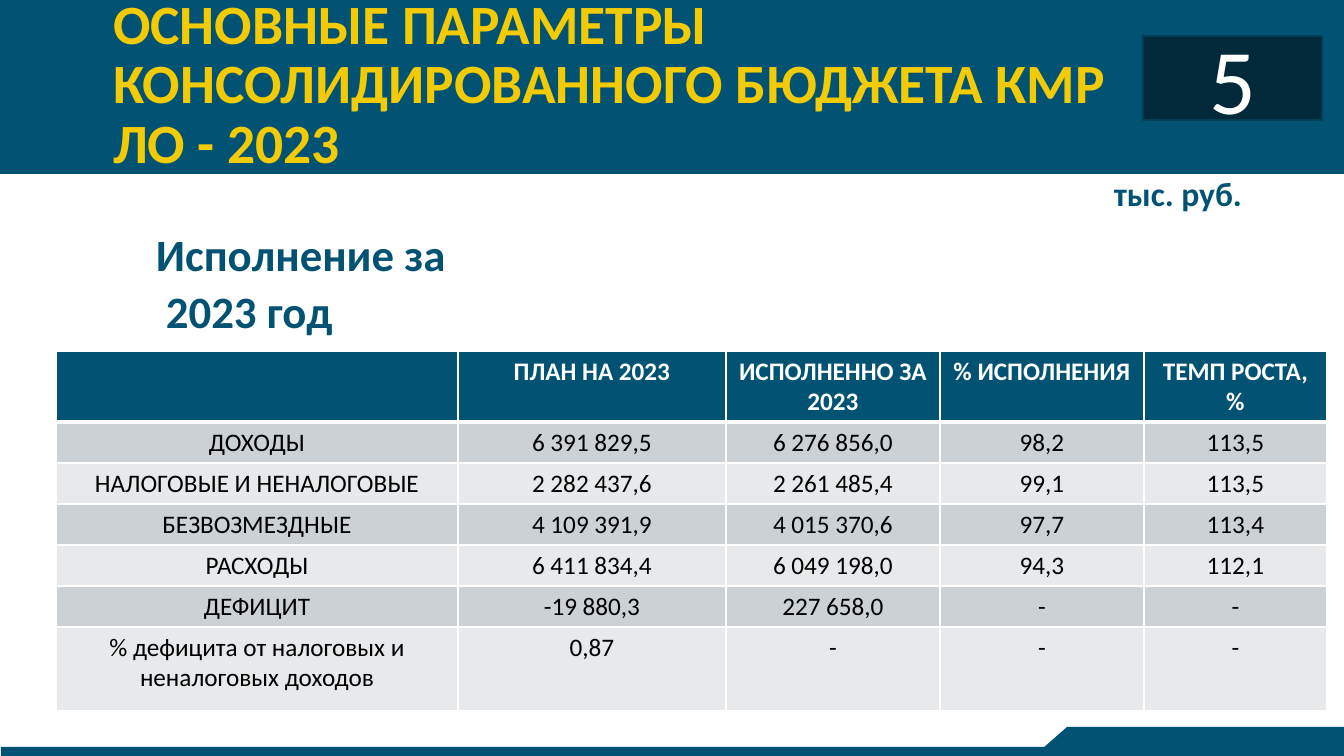
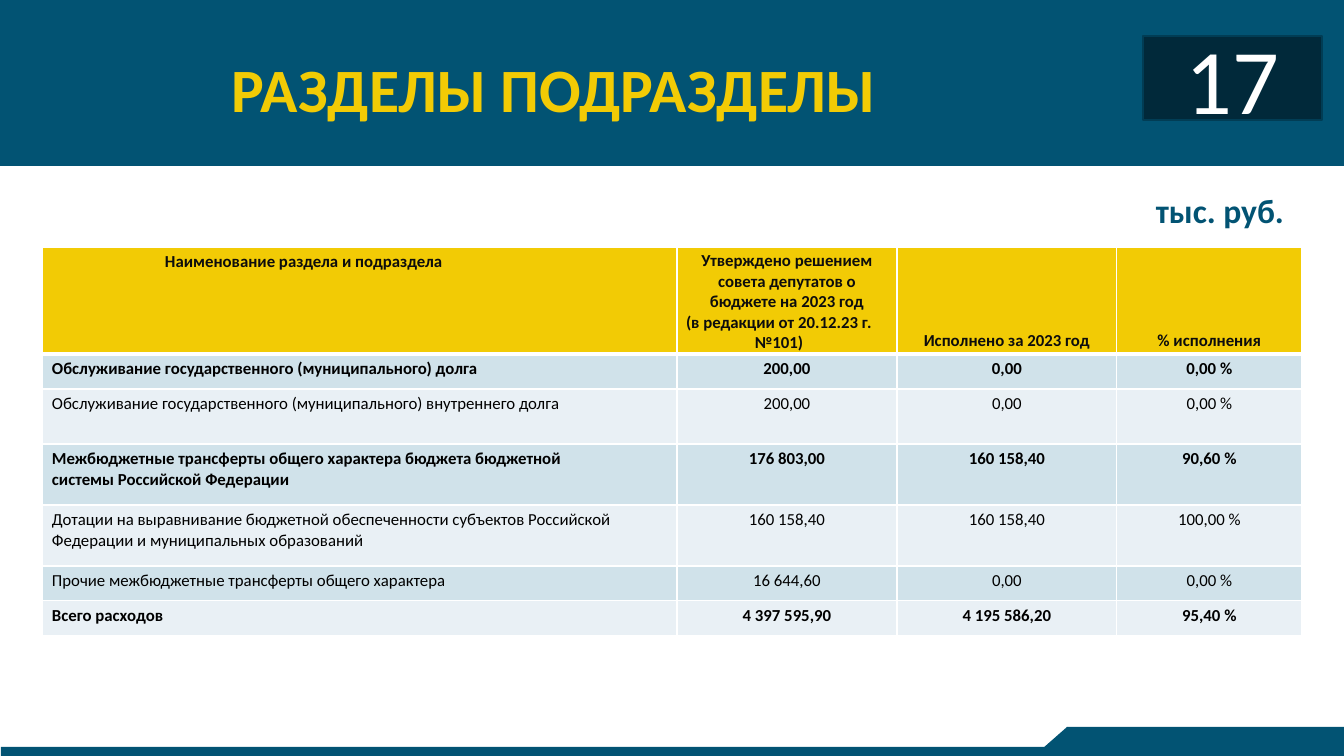
from dataclasses import dataclass

from lxml import etree
from pptx import Presentation
from pptx import util as u
from pptx.dml import color
from pptx.enum import shapes, text
from pptx.oxml import ns


@dataclass(frozen=True)
class Theme:
    """Colours, font and type sizes shared by the slides."""
    font: str = "Calibri"
    teal: str = "025373"
    yellow: str = "F2CB05"
    navy: str = "01293A"
    navy_line: str = "013D55"
    white: str = "FFFFFF"
    black: str = "000000"
    ink: str = "0D0D0D"
    grey_bands: tuple = ("CCD1D5", "E7E9EB")
    blue_bands: tuple = ("D0E2EA", "E9F0F5")
    badge: int = 66
    heading: int = 32
    unit: int = 24
    table: int = 18
    small: int = 12


T = Theme()
W, H = 1344, 756
CENTER, LEFT = text.PP_ALIGN.CENTER, text.PP_ALIGN.LEFT
TOP, MIDDLE, BOTTOM = (text.MSO_ANCHOR.TOP, text.MSO_ANCHOR.MIDDLE,
                       text.MSO_ANCHOR.BOTTOM)

BUDGET_ROWS = [
    ["", "ПЛАН НА 2023", "ИСПОЛНЕННО ЗА 2023", "% ИСПОЛНЕНИЯ", "ТЕМП РОСТА,\v%"],
    ["ДОХОДЫ", "6 391 829,5", "6 276 856,0", "98,2", "113,5"],
    ["НАЛОГОВЫЕ И НЕНАЛОГОВЫЕ", "2 282 437,6", "2 261 485,4", "99,1", "113,5"],
    ["БЕЗВОЗМЕЗДНЫЕ", "4 109 391,9", "4 015 370,6", "97,7", "113,4"],
    ["РАСХОДЫ", "6 411 834,4", "6 049 198,0", "94,3", "112,1"],
    ["ДЕФИЦИТ", "-19 880,3", "227 658,0", "-", "-"],
    ["% дефицита от налоговых и неналоговых доходов", "0,87", "-", "-", "-"],
]

SECTION_ROWS = [
    ["Наименование раздела и подраздела",
     "Утверждено решением совета депутатов о бюджете на 2023 год\n"
     "(в редакции от 20.12.23 г.\n№101)",
     "Исполнено за 2023 год", "% исполнения"],
    ["Обслуживание государственного (муниципального) долга",
     "200,00", "0,00", "0,00 %"],
    ["Обслуживание государственного (муниципального) внутреннего долга",
     "200,00", "0,00", "0,00 %"],
    ["Межбюджетные трансферты общего характера бюджета бюджетной\v"
     "системы Российской Федерации",
     "176 803,00", "160 158,40", "90,60 %"],
    ["Дотации на выравнивание бюджетной обеспеченности субъектов Российской "
     "Федерации и муниципальных образований",
     "160 158,40", "160 158,40", "100,00 %"],
    ["Прочие межбюджетные трансферты общего характера",
     "16 644,60", "0,00", "0,00 %"],
    ["Всего расходов", "4 397 595,90", "4 195 586,20", "95,40 %"],
]
SECTION_TOTALS = (1, 3, 6)


def px(n):
    """Turn pixels into EMU."""
    return u.Emu(round(n * 914400 / 100.8))


def rgb(value):
    """Turn a hex string into a colour."""
    return color.RGBColor.from_string(value)


def style(p, size, colour, bold=False, align=LEFT, spacing=None):
    """Format one paragraph."""
    p.alignment = align
    if spacing:
        p.line_spacing = spacing
    f = p.font
    f.name, f.size, f.bold = T.font, u.Pt(size), bold
    f.color.rgb = rgb(colour)


def indent(p, left):
    """Set the left indent of a paragraph."""
    p._p.get_or_add_pPr().set("marL", str(px(left)))


def add_block(s, box, fill, line=None, kind=shapes.MSO_SHAPE.RECTANGLE):
    """Add a flat preset shape."""
    sp = s.shapes.add_shape(kind, *map(px, box))
    sp.shadow.inherit = False
    sp.fill.solid()
    sp.fill.fore_color.rgb = rgb(fill)
    if line:
        sp.line.color.rgb = rgb(line)
        sp.line.width = u.Pt(1)
    else:
        sp.line.fill.background()
    return sp


def add_text(s, box, lines, size):
    """Add a bold teal text box with one paragraph per line and return its paragraphs."""
    tf = s.shapes.add_textbox(*map(px, box)).text_frame
    tf.word_wrap = True
    tf.text = "\n".join(lines)
    for i, p in enumerate(tf.paragraphs):
        style(p, size, T.teal, True, spacing=0.8 if len(lines) > 1 else 0.9)
        if i:
            p.space_before = u.Pt(10)
    return tf.paragraphs


def add_footer(s, layout):
    """Draw the footer bar and its raised tab, and hand them to the layout."""
    left, top = 1067, 727
    height = H - top
    parts = [
        add_block(s, (1, 747, W - 1, 9), T.teal),
        add_block(s, (left, top, W - left, height), T.teal),
        add_block(s, (left - 33, top, 66, height), T.teal,
                  kind=shapes.MSO_SHAPE.FLOWCHART_MERGE),
    ]
    parts[-1].rotation = 180
    for sp in parts:
        layout.shapes.element.append(sp.element)


def add_header(s, title, box, band_height, size, number, align):
    """Place the title band, the title and the number badge."""
    band = add_block(s, (0, 0, W, band_height), T.teal)
    s.shapes.element.insert(2, band.element)
    sp = s.shapes.title
    sp.left, sp.top, sp.width, sp.height = map(px, box)
    tf = sp.text_frame
    tf.text = title
    tf.auto_size = text.MSO_AUTO_SIZE.NONE
    tf.vertical_anchor = MIDDLE
    style(tf.paragraphs[0], size, T.yellow, True, align, 0.9)

    badge = add_block(s, (1143, 36, 179, 84), T.navy, T.navy_line).text_frame
    badge.text = number
    badge.vertical_anchor = MIDDLE
    style(badge.paragraphs[0], T.badge, T.white, align=CENTER)


def add_borders(cell, row):
    """Draw white cell borders, heavier below the header row."""
    heavy = {"T": row == 1, "B": row == 0}
    for side in "LRTB":
        width = u.Pt(3 if heavy.get(side) else 1)
        ln = etree.SubElement(cell._tc.get_or_add_tcPr(),
                              ns.qn("a:ln" + side), w=str(width))
        fill = etree.SubElement(ln, ns.qn("a:solidFill"))
        etree.SubElement(fill, ns.qn("a:srgbClr"), val=T.white)


def set_margins(cell, left, top, right, bottom):
    """Set the inner margins of a cell."""
    cell.margin_left, cell.margin_top = px(left), px(top)
    cell.margin_right, cell.margin_bottom = px(right), px(bottom)


def add_grid(s, origin, cols, heights, rows, size, head, bands, bold_rows=()):
    """Add a banded table; head is the fill and text colour of its first row."""
    box = (*origin, sum(cols), sum(heights))
    table = s.shapes.add_table(len(rows), len(cols), *map(px, box)).table
    for col, width in zip(table.columns, cols):
        col.width = px(width)
    for row, height in zip(table.rows, heights):
        row.height = px(height)
    for i, values in enumerate(rows):
        fill, ink = (bands[(i - 1) % 2], T.black) if i else head
        for j, value in enumerate(values):
            cell = table.cell(i, j)
            add_borders(cell, i)
            cell.fill.solid()
            cell.fill.fore_color.rgb = rgb(fill)
            cell.text = value
            for p in cell.text_frame.paragraphs:
                style(p, size, ink, i == 0 or i in bold_rows, CENTER)
    return table


def budget_slide(s):
    """Build the slide with the main budget figures."""
    add_header(s, "ОСНОВНЫЕ ПАРАМЕТРЫ\vКОНСОЛИДИРОВАННОГО БЮДЖЕТА КМР ЛО - 2023",
               (103, 0, 1054, 172), 174, 39.6, "5", LEFT)
    period = add_text(s, (146, 232, 454, 119), ["Исполнение за", "2023 год"],
                      T.heading)
    indent(period[1], 10)
    add_text(s, (1104, 173, 240, 57), ["тыс. руб."], T.unit)
    add_grid(s, (56, 351), (402, 268, 214, 204, 183), (71, *[41] * 5, 84),
             BUDGET_ROWS, T.table, (T.teal, T.white), T.grey_bands)


def sections_slide(s):
    """Build the slide with spending by section."""
    add_header(s, "РАЗДЕЛЫ ПОДРАЗДЕЛЫ", (93, 20, 922, 146), 166, 44, "17", CENTER)
    add_text(s, (1146, 190, 198, 57), ["тыс. руб."], T.unit)
    table = add_grid(s, (42, 247), (635, 220, 220, 185),
                     (107, 35, 55, 61, 61, 35, 35), SECTION_ROWS, T.small,
                     (T.yellow, T.ink), T.blue_bands, SECTION_TOTALS)
    for cell in table.iter_cells():
        set_margins(cell, 0, 5, 0, 0)
    for i in range(len(SECTION_ROWS)):
        name = table.cell(i, 0)
        name.margin_left = px(10 if i else 123)
        name.text_frame.paragraphs[0].alignment = LEFT
    approved = table.cell(0, 1)
    set_margins(approved, 0, 4, 16, 0)
    indent(approved.text_frame.paragraphs[0], 16)
    for j in (2, 3):
        cell = table.cell(0, j)
        cell.vertical_anchor = BOTTOM
        cell.margin_bottom = px(3)


def main():
    """Build and save the presentation."""
    prs = Presentation()
    prs.slide_width, prs.slide_height = px(W), px(H)
    layout = prs.slide_layouts[5]
    for i, build in enumerate((budget_slide, sections_slide)):
        s = prs.slides.add_slide(layout)
        if i == 0:
            add_footer(s, layout)
        build(s)
    prs.save("out.pptx")


if __name__ == "__main__":
    main()
